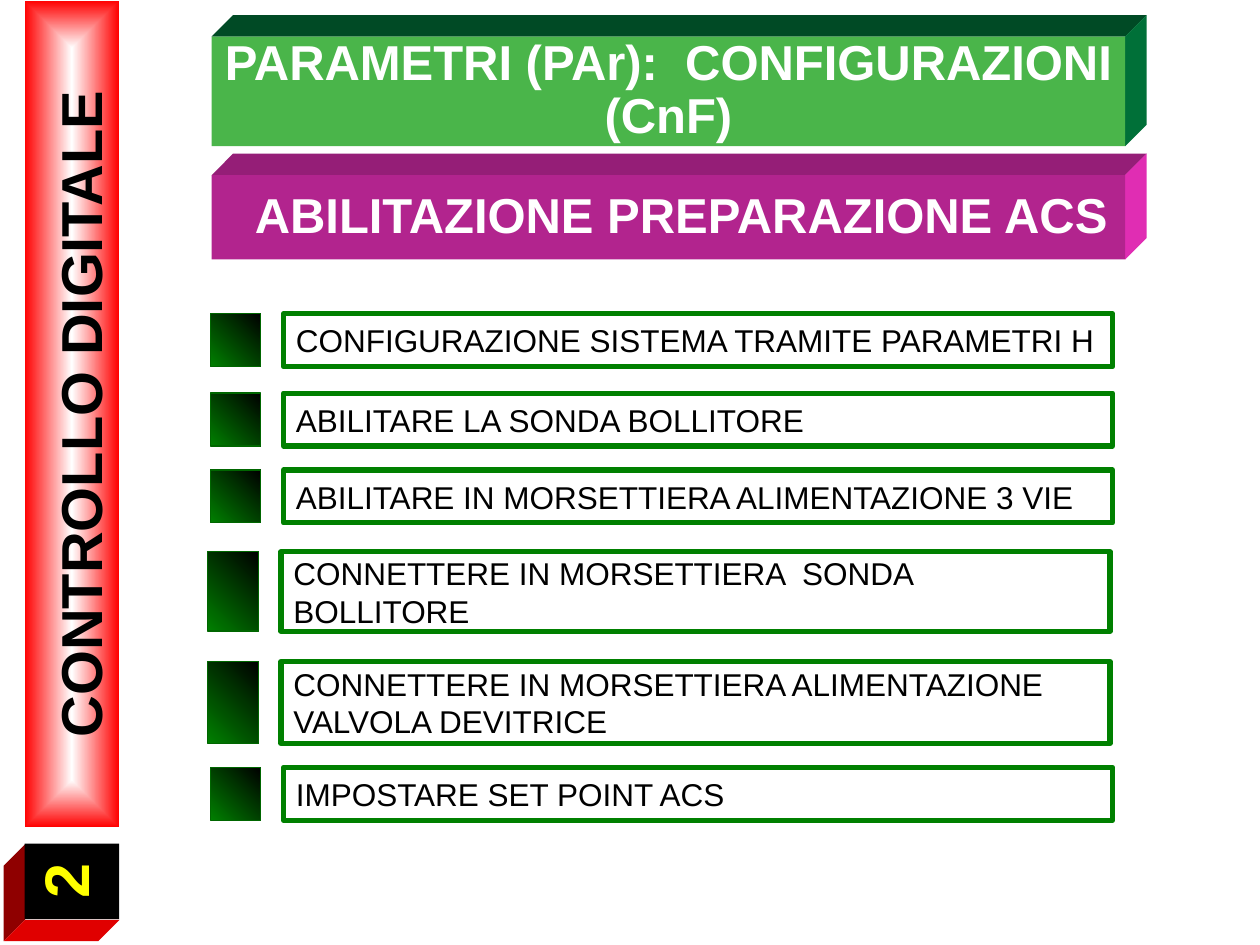
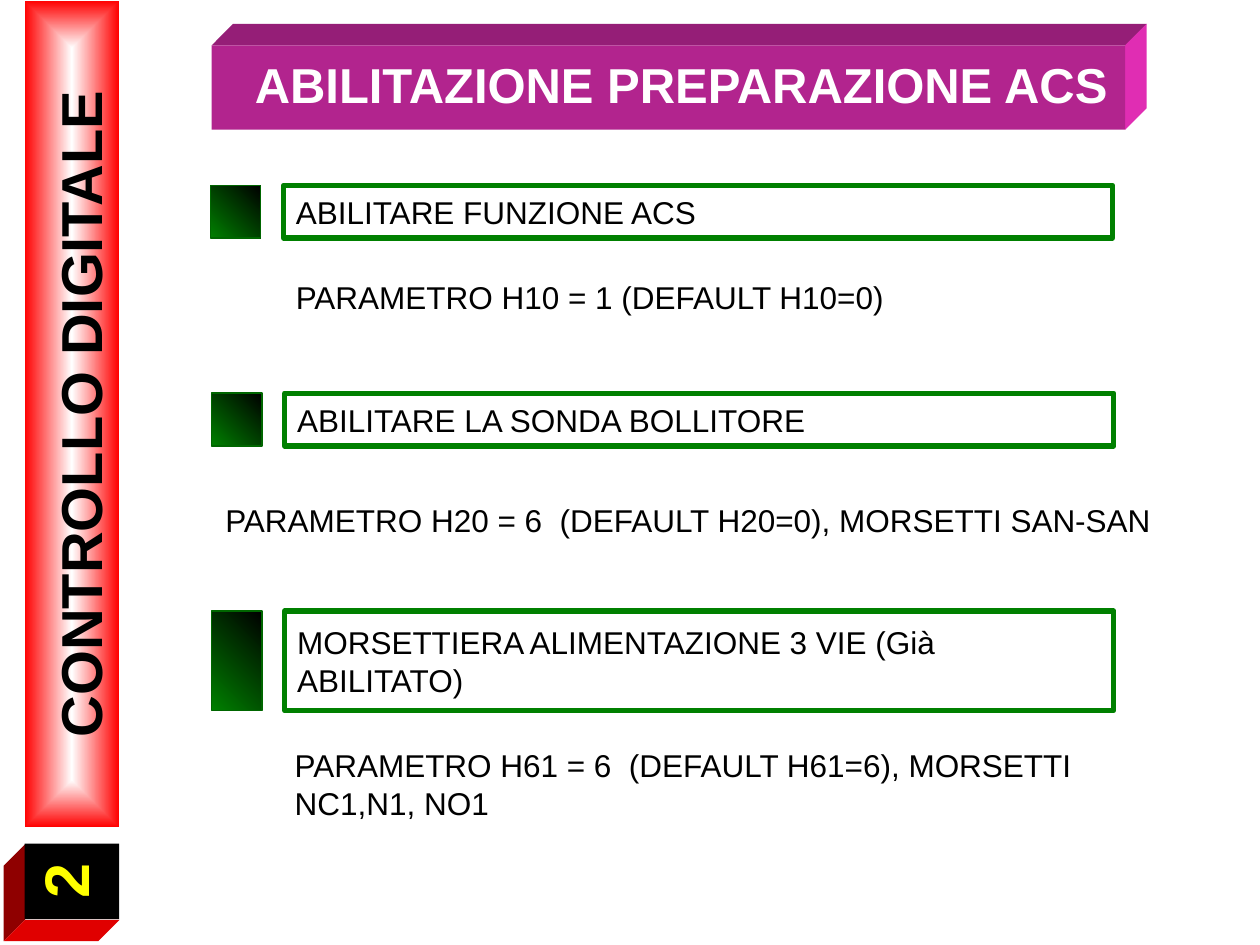
from lxml.etree import SubElement
from pptx import Presentation
from pptx.dml.color import RGBColor
from pptx.enum.shapes import MSO_SHAPE
from pptx.enum.text import MSO_ANCHOR, PP_ALIGN
from pptx.oxml.ns import qn
from pptx.util import Inches, Pt

WHITE = RGBColor(0xFF, 0xFF, 0xFF)
BLACK = RGBColor(0, 0, 0)
RED = RGBColor(0xFF, 0, 0)
CUBE_LEFT = RGBColor(0x8F, 0, 0)
CUBE_BOTTOM = RGBColor(0xE0, 0, 0)
YELLOW = RGBColor(0xFF, 0xFF, 0)
FRAME_GREEN = RGBColor(0, 0x80, 0)
EDGE_GREEN = RGBColor(0, 0x66, 0)
# Front, top and side of each raised band
GREEN_BAND = (RGBColor(0x4A, 0xB5, 0x4A), RGBColor(0, 0x4A, 0x25), RGBColor(0, 0x70, 0x38))
PURPLE_BAND = (RGBColor(0xB2, 0x24, 0x8E), RGBColor(0x95, 0x1E, 0x77), RGBColor(0xE0, 0x2D, 0xB3))

FONT = "Arial"
DEPTH = 0.17
BAND_LEFT, BAND_WIDTH = 1.68, 7.25
MARKER_WIDTH, MARKER_STEP = 0.4, 0.58
FRAME_WIDTH = 6.58
ROW = 0.42

SIDE_TITLE = "CONTROLLO DIGITALE"
CHAPTER = "2"
TOPIC = "ABILITAZIONE PREPARAZIONE ACS"

# bands: text, top, height, colours, left inset
# steps: text, frame left, top, height
# notes: text, left, top, width, height
PAGES = [
    {
        "bands": [
            ("PARAMETRI (PAr):  CONFIGURAZIONI (CnF)", 0.29, 0.87, GREEN_BAND, 0.1),
            (TOPIC, 1.39, 0.67, PURPLE_BAND, 0.3),
        ],
        "steps": [
            ("CONFIGURAZIONE SISTEMA TRAMITE PARAMETRI H", 2.25, 2.49, ROW),
            ("ABILITARE LA SONDA BOLLITORE", 2.25, 3.12, ROW),
            ("ABILITARE IN MORSETTIERA ALIMENTAZIONE 3 VIE", 2.25, 3.73, ROW),
            ("CONNETTERE IN MORSETTIERA  SONDA BOLLITORE", 2.23, 4.38, 0.63),
            ("CONNETTERE IN MORSETTIERA ALIMENTAZIONE VALVOLA DEVITRICE", 2.23, 5.25, 0.65),
            ("IMPOSTARE SET POINT ACS", 2.25, 6.09, ROW),
        ],
        "notes": [],
    },
    {
        "bands": [(TOPIC, 0.36, 0.67, PURPLE_BAND, 0.3)],
        "steps": [
            ("ABILITARE FUNZIONE ACS", 2.25, 1.47, ROW),
            ("ABILITARE LA SONDA BOLLITORE", 2.26, 3.12, ROW),
            ("MORSETTIERA ALIMENTAZIONE 3 VIE (Già ABILITATO)", 2.26, 4.85, 0.79),
        ],
        "notes": [
            ("PARAMETRO H10 = 1 (DEFAULT H10=0)", 2.25, 2.16, 6.66, 0.4),
            ("PARAMETRO H20 = 6  (DEFAULT H20=0), MORSETTI SAN-SAN", 1.69, 3.93, 7.63, 0.4),
            ("PARAMETRO H61 = 6  (DEFAULT H61=6), MORSETTI NC1,N1, NO1", 2.24, 5.87, 7.25, 0.71),
        ],
    },
]


def add_box(page, left, top, width, height, fill=None, line=None, line_width=0.75):
    box = page.shapes.add_shape(MSO_SHAPE.RECTANGLE, *map(Inches, (left, top, width, height)))
    box.shadow.inherit = False
    if fill is None:
        box.fill.background()
    else:
        box.fill.solid()
        box.fill.fore_color.rgb = fill
    if line is None:
        box.line.fill.background()
    else:
        box.line.color.rgb = line
        box.line.width = Pt(line_width)
    return box


def add_face(page, points, colour):
    """Draw one slanted face of a raised block."""
    corners = [(Inches(x), Inches(y)) for x, y in points]
    builder = page.shapes.build_freeform(*corners[0])
    builder.add_line_segments(corners[1:], close=True)
    face = builder.convert_to_shape()
    face.shadow.inherit = False
    face.fill.solid()
    face.fill.fore_color.rgb = colour
    face.line.fill.background()


def set_gradient(box, start, end):
    box.fill.gradient()
    for stop, colour in zip(box.fill.gradient_stops, (start, end)):
        stop.color.rgb = colour


def write(box, text, size, colour=BLACK, bold=False, align=PP_ALIGN.LEFT, spacing=None):
    frame = box.text_frame
    frame.word_wrap = True
    para = frame.paragraphs[0]
    para.text = text
    para.alignment = align
    if spacing:
        para.line_spacing = spacing
    font = para.font
    font.name, font.size, font.bold = FONT, Pt(size), bold
    font.color.rgb = colour
    return frame


def add_turned_label(box, text, size, colour, spacing):
    """Turn the box upwards and write its centred label."""
    box.rotation = 270
    frame = write(box, text, size, colour, True, PP_ALIGN.CENTER, spacing)
    frame.vertical_anchor = MSO_ANCHOR.MIDDLE
    frame.margin_top = 0
    return frame


def add_side_strip(page):
    strip = add_box(page, -2.71, 2.91, 6.56, 0.75, WHITE)
    set_gradient(strip, WHITE, RED)
    gradient = strip.fill._xPr.find(qn("a:gradFill"))
    gradient.remove(gradient.find(qn("a:lin")))
    outline = SubElement(gradient, qn("a:path"), {"path": "shape"})
    SubElement(outline, qn("a:fillToRect"), {side: "50000" for side in "ltrb"})
    add_turned_label(strip, SIDE_TITLE, 33, BLACK, 1.3)

    left, top, right, bottom = 0.2, 6.7, 0.95, 7.3
    add_face(page, [(left, top), (left, bottom), (left - DEPTH, bottom + DEPTH),
                    (left - DEPTH, top + DEPTH)], CUBE_LEFT)
    add_face(page, [(left, bottom), (right, bottom), (right - DEPTH, bottom + DEPTH),
                    (left - DEPTH, bottom + DEPTH)], CUBE_BOTTOM)
    cube = add_box(page, 0.27, 6.62, 0.6, 0.75, BLACK)
    frame = add_turned_label(cube, CHAPTER, 36, YELLOW, 0.9)
    frame.word_wrap = False
    frame.paragraphs[0].space_before = Pt(7)


def add_band(page, text, top, height, colours, inset):
    front, upper, side = colours
    left, right, bottom = BAND_LEFT, BAND_LEFT + BAND_WIDTH, top + height
    add_face(page, [(left, top), (left + DEPTH, top - DEPTH), (right + DEPTH, top - DEPTH),
                    (right, top)], upper)
    add_face(page, [(right, top), (right + DEPTH, top - DEPTH), (right + DEPTH, bottom - DEPTH),
                    (right, bottom)], side)
    band = add_box(page, left, top, BAND_WIDTH, height, front)
    frame = write(band, text, 28, WHITE, True, PP_ALIGN.CENTER, 0.9)
    frame.vertical_anchor = MSO_ANCHOR.MIDDLE
    frame.margin_left = Inches(inset)


def add_step(page, text, left, top, height):
    step = add_box(page, left, top, FRAME_WIDTH, height, line=FRAME_GREEN, line_width=3)
    write(step, text, 18).vertical_anchor = MSO_ANCHOR.MIDDLE
    marker = add_box(page, left - MARKER_STEP, top, MARKER_WIDTH, height, line=EDGE_GREEN)
    set_gradient(marker, FRAME_GREEN, BLACK)
    marker.fill.gradient_angle = 45


def add_note(page, text, *place):
    write(page.shapes.add_textbox(*map(Inches, place)), text, 18)


def main():
    deck = Presentation()
    deck.slide_width, deck.slide_height = Inches(10), Inches(7.5)
    for content in PAGES:
        page = deck.slides.add_slide(deck.slide_layouts[6])
        add_side_strip(page)
        for band in content["bands"]:
            add_band(page, *band)
        for step in content["steps"]:
            add_step(page, *step)
        for note in content["notes"]:
            add_note(page, *note)
    deck.save("out.pptx")


if __name__ == "__main__":
    main()
